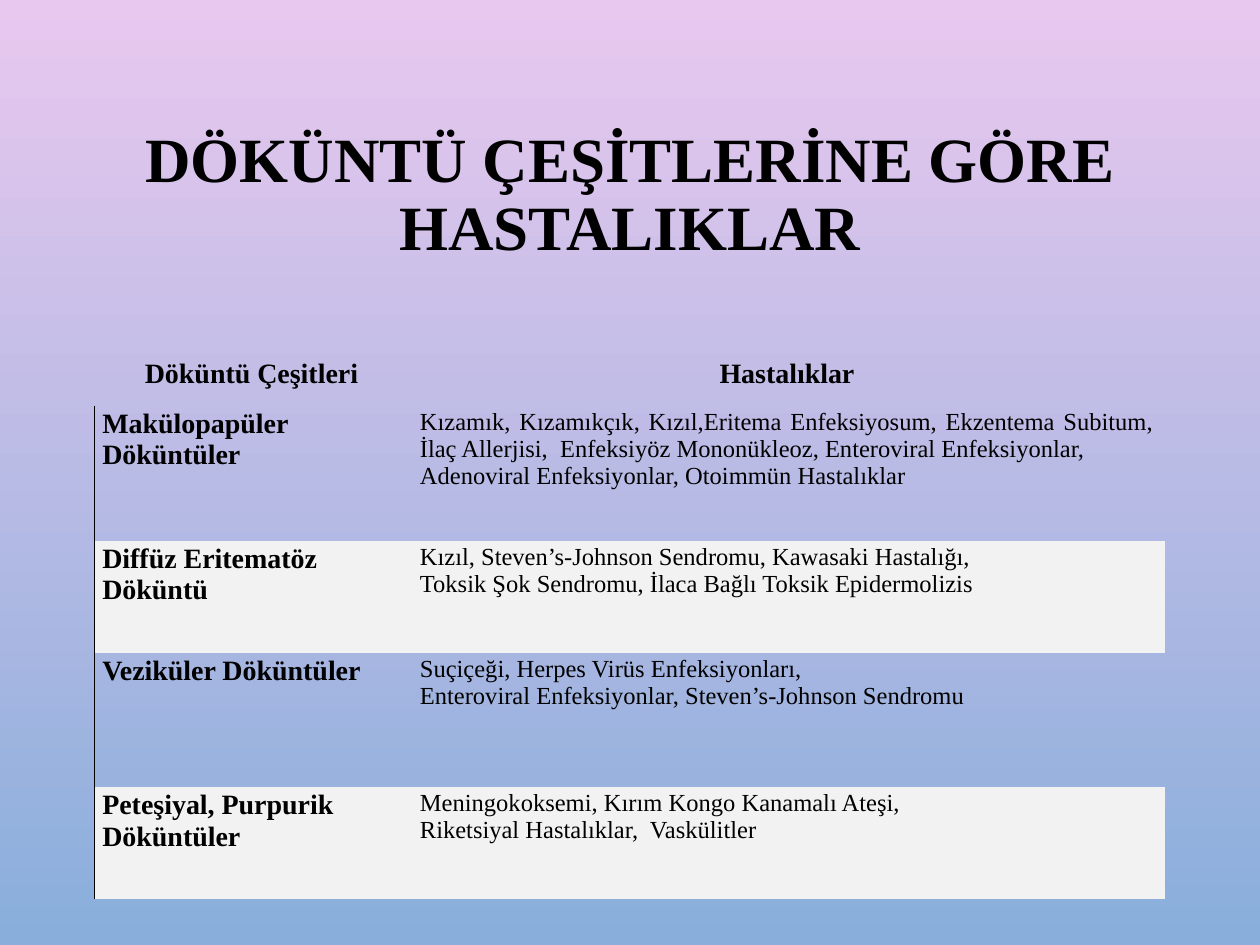
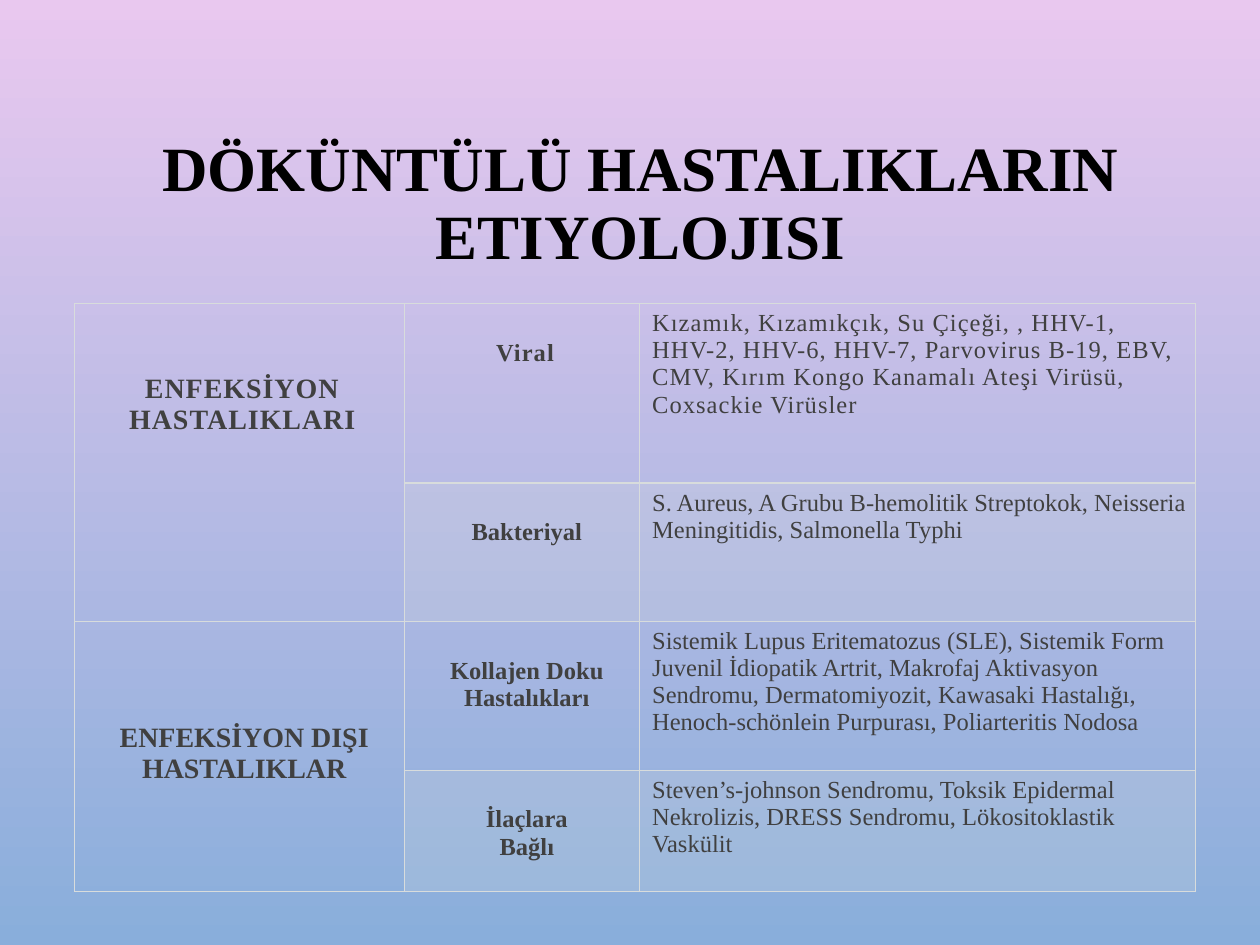
from lxml.etree import SubElement
from pptx import Presentation
from pptx.dml.color import RGBColor
from pptx.enum.text import MSO_ANCHOR as Anchor, MSO_AUTO_SIZE as AutoSize, PP_ALIGN as Align
from pptx.oxml.ns import qn
from pptx.util import Pt

FONT = "Times New Roman"
COLORS = {
    "sky_top": "E9C8EF",
    "sky_bottom": "89AEDB",
    "black": "000000",
    "text_gray": "404040",
    "band": "F2F2F2",
    "grid": "D8DCDC",
    "tint": "D8DEDC",
}
EDGES = ("lnL", "lnR", "lnT", "lnB")
TITLE_ONLY = 5


def add_table_slide(title, title_box, table_corner, widths, heights):
    """Add a slide with a placed title and an unstyled table; return the table."""
    page = deck.slides.add_slide(deck.slide_layouts[TITLE_ONLY])
    heading = page.shapes.title
    for name, value in zip(("left", "top", "width", "height"), title_box):
        setattr(heading, name, Pt(value))
    frame = heading.text_frame
    frame.text = title
    frame.auto_size = AutoSize.NONE
    frame.vertical_anchor = Anchor.MIDDLE
    para = frame.paragraphs[0]
    para.alignment = Align.CENTER
    para.line_spacing = 0.9
    for name, value in {"name": FONT, "size": Pt(36), "bold": True}.items():
        setattr(para.font, name, value)
    para.font.color.rgb = RGBColor.from_string(COLORS["black"])

    left, top = table_corner
    table = page.shapes.add_table(
        len(heights), len(widths), Pt(left), Pt(top), Pt(sum(widths)), Pt(sum(heights))
    ).table
    table.first_row = table.horz_banding = False
    for column, width in zip(table.columns, widths):
        column.width = Pt(width)
    for row, height in zip(table.rows, heights):
        row.height = Pt(height)
    return table


def format_cell(cell, lines, size, bold, color, align, margins, borders, spacing=0):
    """Write the lines, and draw the edges named in borders (edge to color)."""
    for side, value in zip(("left", "top", "right", "bottom"), margins):
        setattr(cell, f"margin_{side}", Pt(value))
    cell.text = "\n".join(lines)
    for para in cell.text_frame.paragraphs:
        para.alignment = align
        for span in para.runs:
            for name, value in {"name": FONT, "size": Pt(size), "bold": bold}.items():
                setattr(span.font, name, value)
            span.font.color.rgb = RGBColor.from_string(COLORS[color])
            if spacing:
                span.font._element.set("spc", str(spacing))
    properties = cell._tc.get_or_add_tcPr()
    for edge in EDGES:
        line = SubElement(properties, qn(f"a:{edge}"), w=str(Pt(0.75)))
        if edge in borders:
            paint = SubElement(line, qn("a:solidFill"))
            SubElement(paint, qn("a:srgbClr"), val=COLORS[borders[edge]])
        else:
            SubElement(line, qn("a:noFill"))
    cell.fill.background()


deck = Presentation()
deck.slide_width, deck.slide_height = Pt(720), Pt(540)

sky = deck.slide_master.background.fill
sky.gradient()
sky.gradient_angle = 270
for stop, position, name in zip(sky.gradient_stops, (0, 1), ("sky_top", "sky_bottom")):
    stop.position = position
    stop.color.rgb = RGBColor.from_string(COLORS[name])

# Slide 1: diseases by type of rash
rash_rows = [
    ("Makülopapüler Döküntüler", [
        "Kızamık, Kızamıkçık, Kızıl,Eritema Enfeksiyosum, Ekzentema Subitum, "
        "İlaç Allerjisi,  Enfeksiyöz Mononükleoz, Enteroviral Enfeksiyonlar,",
        "Adenoviral Enfeksiyonlar, Otoimmün Hastalıklar"]),
    ("Diffüz Eritematöz Döküntü", [
        "Kızıl, Steven’s-Johnson Sendromu, Kawasaki Hastalığı,",
        "Toksik Şok Sendromu, İlaca Bağlı Toksik Epidermolizis"]),
    ("Veziküler Döküntüler", [
        "Suçiçeği, Herpes Virüs Enfeksiyonları,",
        "Enteroviral Enfeksiyonlar, Steven’s-Johnson Sendromu"]),
    ("Peteşiyal, Purpurik Döküntüler", [
        "Meningokoksemi, Kırım Kongo Kanamalı Ateşi,",
        "Riketsiyal Hastalıklar,  Vaskülitler"]),
]
rash_margins = (4.5, 1.5, 6.5, 9.5)
rash_table = add_table_slide(
    "DÖKÜNTÜ ÇEŞİTLERİNE GÖRE HASTALIKLAR", (54, 49, 612, 126),
    (54, 162), (181.5, 430.5), (70, 77, 64, 77, 64))
for column, label in enumerate(("Döküntü Çeşitleri", "Hastalıklar")):
    cell = rash_table.cell(0, column)
    format_cell(cell, [label], 16, True, "black", Align.CENTER, rash_margins, {})
    cell.vertical_anchor = Anchor.BOTTOM
for row, (rash, diseases) in enumerate(rash_rows, start=1):
    rash_cell, disease_cell = rash_table.cell(row, 0), rash_table.cell(row, 1)
    format_cell(rash_cell, [rash], 16, True, "black", Align.LEFT, rash_margins, {"lnL": "black"})
    format_cell(disease_cell, diseases, 14, False, "black", Align.JUSTIFY, rash_margins, {})
    if row % 2 == 0:
        for cell in (rash_cell, disease_cell):
            cell.fill.solid()
            cell.fill.fore_color.rgb = RGBColor.from_string(COLORS["band"])

# Slide 2: causes of rash diseases
groups = [("ENFEKSİYON HASTALIKLARI", 40), ("ENFEKSİYON DIŞI HASTALIKLAR", 57.5)]
causes = [
    (["Viral"],
     "Kızamık, Kızamıkçık, Su Çiçeği, , HHV-1, HHV-2, HHV-6, HHV-7, Parvovirus B-19, EBV, "
     "CMV, Kırım Kongo Kanamalı Ateşi Virüsü, Coxsackie Virüsler"),
    (["Bakteriyal"],
     "S. Aureus, A Grubu Β-hemolitik Streptokok, Neisseria Meningitidis, Salmonella Typhi"),
    (["Kollajen Doku Hastalıkları"],
     "Sistemik Lupus Eritematozus (SLE), Sistemik Form Juvenil İdiopatik Artrit, "
     "Makrofaj Aktivasyon Sendromu, Dermatomiyozit, Kawasaki Hastalığı, "
     "Henoch-schönlein Purpurası, Poliarteritis Nodosa"),
    (["İlaçlara", "Bağlı"],
     "Steven’s-johnson Sendromu, Toksik Epidermal Nekrolizis, DRESS Sendromu, "
     "Lökositoklastik Vaskülit"),
]
grid = dict.fromkeys(EDGES, "grid")
cause_table = add_table_slide(
    "DÖKÜNTÜLÜ HASTALIKLARIN ETIYOLOJISI", (60, 66, 612, 102),
    (42.5, 173.5), (188.5, 134.5, 317.5), (102.5, 78.5, 85, 69.5))
for row, (cause, diseases) in enumerate(causes):
    spacing = 60 if row == 0 else 0
    right = 3.6 if row == 0 else 1.5
    group, group_top = groups[row // 2]
    group_lines = [group] if row % 2 == 0 else []
    group_cell, cause_cell, disease_cell = (cause_table.cell(row, column) for column in range(3))
    for cell, lines, size, bold, align, top in (
        (group_cell, group_lines, 16, True, Align.CENTER, group_top),
        (cause_cell, cause, 14, True, Align.CENTER, 20.5),
        (disease_cell, [diseases], 14, False, Align.LEFT, 3.6),
    ):
        format_cell(cell, lines, size, bold, "text_gray", align,
                    (7.2, top, right, 3.6), grid, spacing)
    if row % 2:
        cause_table.cell(row - 1, 0).merge(group_cell)
        for cell in (cause_cell, disease_cell):
            cell.fill.solid()
            cell.fill.fore_color.rgb = RGBColor.from_string(COLORS["tint"])
            tint = cell._tc.tcPr.find(qn("a:solidFill")).find(qn("a:srgbClr"))
            SubElement(tint, qn("a:alpha"), val="20000")

deck.save("out.pptx")
